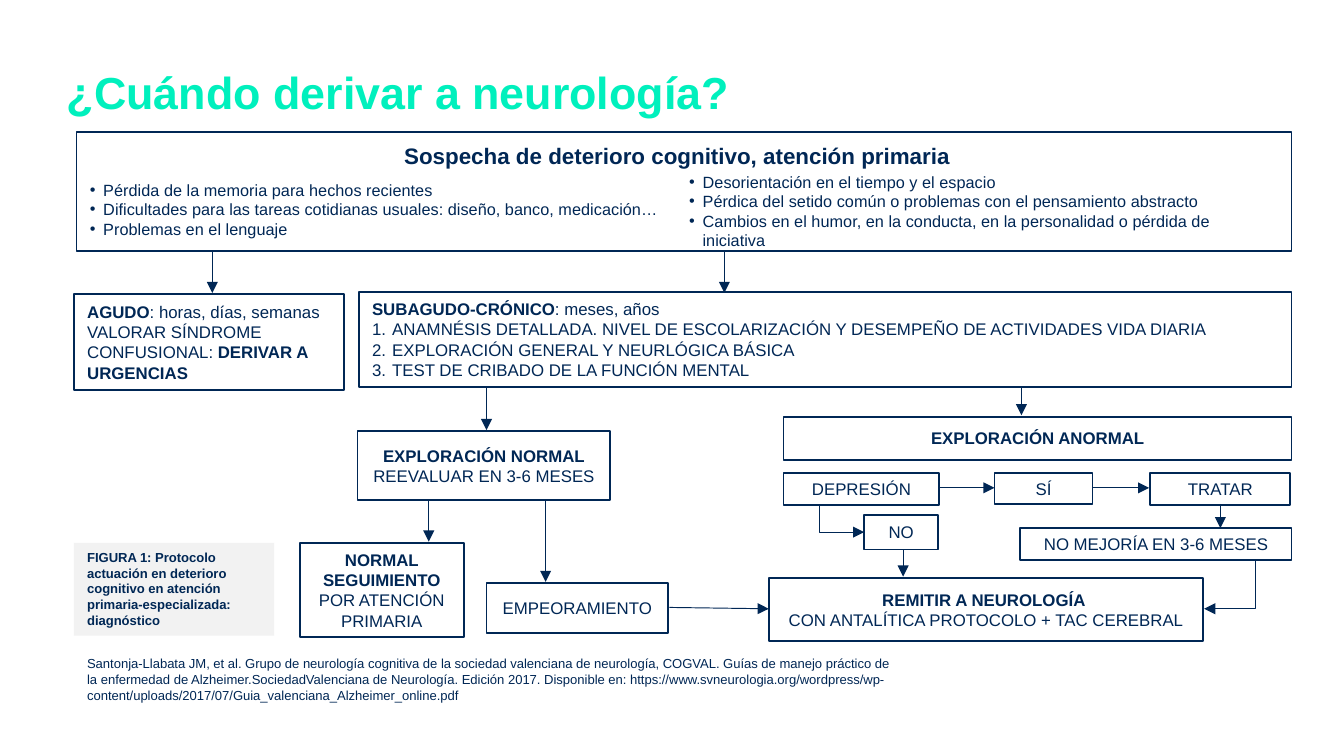
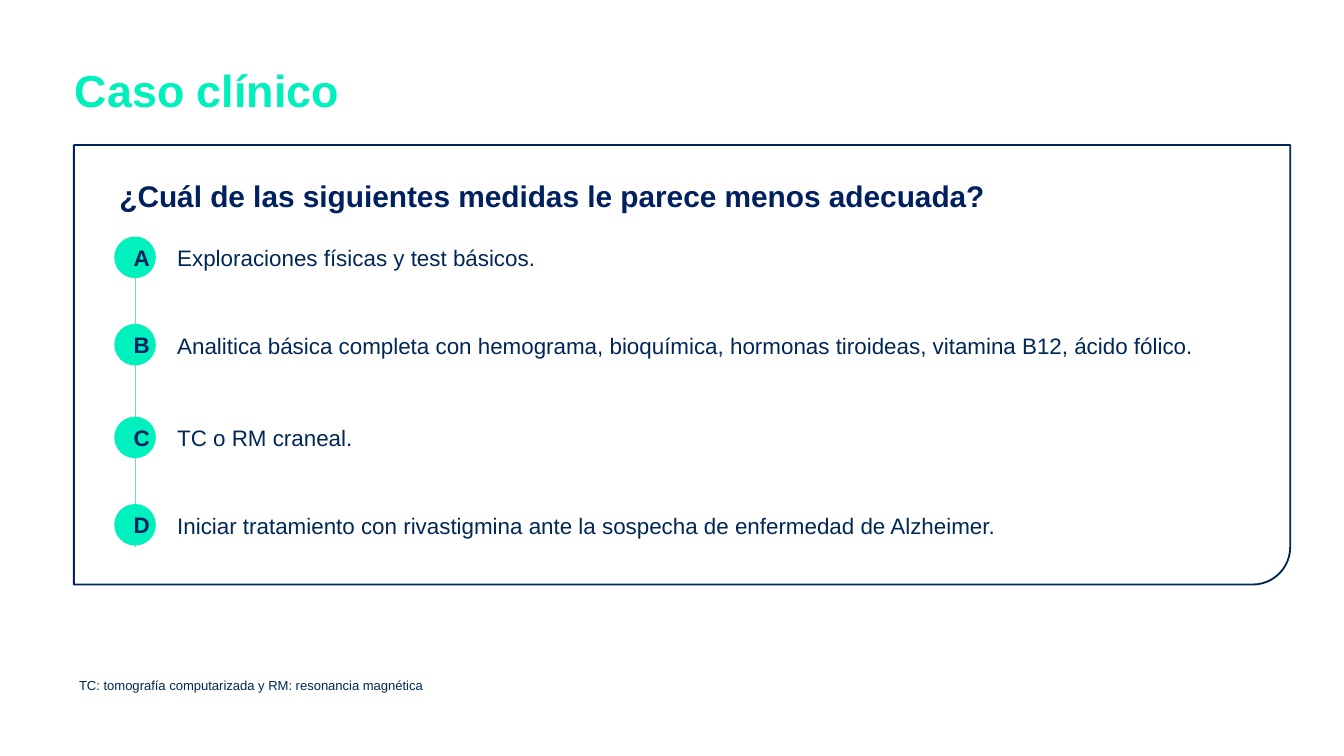
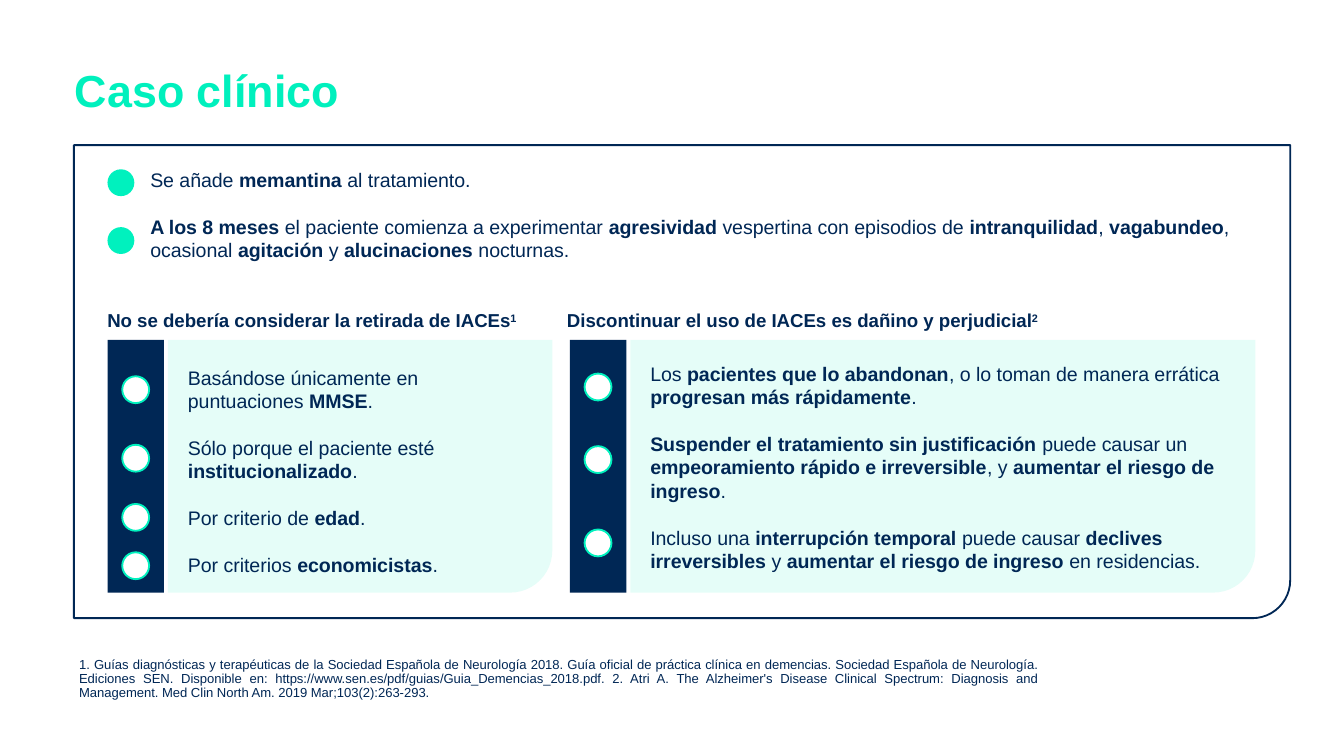
import pptx
import pptx.util
import pptx.dml.color
import pptx.enum.shapes
import pptx.enum.text
import pptx.oxml.ns
from lxml import etree

Inches = pptx.util.Inches
Pt = pptx.util.Pt
SHAPES = pptx.enum.shapes.MSO_SHAPE
CONNECTORS = pptx.enum.shapes.MSO_CONNECTOR
ALIGN = pptx.enum.text.PP_ALIGN
ANCHOR = pptx.enum.text.MSO_ANCHOR
qn = pptx.oxml.ns.qn

FONT = "Arial"
NAVY = "002755"
INDIGO = "002060"
GREEN = "00F1BE"
TITLE_GREEN = "00F0BD"
LINK_GREEN = "6BDEC1"
WHITE = "FFFFFF"
GREY = "F2F2F2"
DOT = 0.2
LETTER_DOT = 0.31


def color(value):
    return pptx.dml.color.RGBColor.from_string(value)


def add_element(parent, tag, **attributes):
    return etree.SubElement(parent, qn(tag), attributes)


def add_bullet(paragraph, bullet, indent):
    properties = paragraph._p.get_or_add_pPr()
    properties.set("marL", str(Inches(indent)))
    properties.set("indent", str(-Inches(indent)))
    add_element(properties, "a:buFont", typeface=FONT)
    if bullet == "number":
        add_element(properties, "a:buAutoNum", type="arabicPeriod")
    else:
        add_element(properties, "a:buChar", char=bullet)


def add_runs(paragraph, text):
    for position, part in enumerate(text.split("**")):
        for row, line in enumerate(part.split("\n")):
            if row:
                paragraph.add_line_break()
            if line:
                run = paragraph.add_run()
                run.text = line
                if position % 2:
                    run.font.bold = True


def write(shape, texts, size, ink=NAVY, bold=None, align=ALIGN.LEFT, anchor=ANCHOR.TOP,
          spacing=None, gap=0, bullet=None, indent=0.1, plain_first=False):
    frame = shape.text_frame
    frame.word_wrap = True
    frame.vertical_anchor = anchor
    for index, text in enumerate(texts):
        paragraph = frame.add_paragraph() if index else frame.paragraphs[0]
        paragraph.alignment = align
        if spacing:
            paragraph.line_spacing = spacing
        if gap and index:
            paragraph.space_before = Pt(gap)
        if bullet and not (plain_first and index == 0):
            add_bullet(paragraph, bullet, indent)
        paragraph.font.name = FONT
        paragraph.font.size = Pt(size)
        paragraph.font.color.rgb = color(ink)
        paragraph.font.bold = bold
        add_runs(paragraph, text)
    return frame


def add_text(slide, box, texts, size, **style):
    text_box = slide.shapes.add_textbox(*map(Inches, box))
    return write(text_box, texts, size, **style)


def add_shape(slide, kind, box, fill, outline=None, alpha=None):
    shape = slide.shapes.add_shape(kind, *map(Inches, box))
    shape.shadow.inherit = False
    shape.fill.solid()
    shape.fill.fore_color.rgb = color(fill)
    if alpha:
        fill_color = shape._element.spPr.find(qn("a:solidFill"))[0]
        add_element(fill_color, "a:alpha", val=str(alpha * 1000))
    if outline:
        shape.line.color.rgb = color(outline)
        shape.line.width = Pt(1)
    else:
        shape.line.fill.background()
    return shape


def add_corner_panel(slide, box, fill, corner, **style):
    panel = add_shape(slide, SHAPES.ROUND_1_RECTANGLE, box, fill, **style)
    panel.adjustments[0] = corner
    panel._element.spPr.find(qn("a:xfrm")).set("flipV", "1")


def add_line(slide, start, end, ink=NAVY, arrow=True, elbow=False):
    kind = CONNECTORS.ELBOW if elbow else CONNECTORS.STRAIGHT
    connector = slide.shapes.add_connector(kind, *map(Inches, start + end))
    connector.line.color.rgb = color(ink)
    connector.line.width = Pt(0.5)
    properties = connector._element.spPr
    if elbow:
        guides = properties.find(qn("a:prstGeom")).find(qn("a:avLst"))
        add_element(guides, "a:gd", name="adj1", fmla="val 0")
    if arrow:
        add_element(properties.find(qn("a:ln")), "a:tailEnd", type="triangle")
    add_element(properties, "a:effectLst")


def add_title(slide, text, box=(0.46, 0.46, 8.14, 0.65)):
    add_text(slide, box, [text], 24, ink=TITLE_GREEN, bold=True, spacing=0.9)


def add_footer(slide, box, text, **style):
    add_text(slide, box, [text], 7, **style)


def add_flow_box(slide, box, texts, align=ALIGN.CENTER, **style):
    shape = add_shape(slide, SHAPES.RECTANGLE, box, WHITE, outline=NAVY)
    write(shape, texts, 9, align=align, anchor=ANCHOR.MIDDLE, **style)


def add_suspicion_box(slide, box):
    left, top, width, height = box
    add_shape(slide, SHAPES.RECTANGLE, box, WHITE, outline=NAVY)
    add_text(slide, (left + 0.13, top + 0.03, width - 0.36, 0.3),
             ["Sospecha de deterioro cognitivo, atención primaria"], 12, bold=True, align=ALIGN.CENTER)
    column = width / 2 - 0.06
    add_text(slide, (left, top + 0.31, column, 0.55), [
        "Pérdida de la memoria para hechos recientes",
        "Dificultades para las tareas cotidianas usuales: diseño, banco, medicación…",
        "Problemas en el lenguaje",
    ], 8.7, bullet="•")
    add_text(slide, (left + column, top + 0.25, column, 0.65), [
        "Desorientación en el tiempo y el espacio",
        "Pérdica del setido común o problemas con el pensamiento abstracto",
        "Cambios en el humor, en la conducta, en la personalidad o pérdida de iniciativa",
    ], 8.7, bullet="•")


def add_flow_arrows(slide):
    straight = [
        ((1.58, 1.87), (1.58, 2.18)), ((5.39, 1.87), (5.39, 2.18)),
        ((3.62, 2.89), (3.62, 3.2)), ((7.6, 2.89), (7.6, 3.09)),
        ((6.99, 3.63), (7.4, 3.63)), ((8.13, 3.63), (8.55, 3.63)),
        ((6.72, 4.09), (6.72, 4.29)), ((9.08, 3.75), (9.08, 3.93)),
        ((4.98, 4.52), (5.72, 4.53)), ((3.19, 3.72), (3.19, 4.03)),
        ((4.06, 3.72), (4.06, 4.33)),
    ]
    for start, end in straight:
        add_line(slide, start, end)
    add_line(slide, (6.1, 3.76), (6.43, 3.96), elbow=True)
    add_line(slide, (9.34, 4.17), (8.96, 4.53), elbow=True)


def build_referral_slide(slide):
    add_title(slide, "¿Cuándo derivar a neurología?", (0.4, 0.48, 9.36, 0.65))
    add_suspicion_box(slide, (0.57, 0.98, 9.04, 0.89))
    add_flow_box(slide, (0.55, 2.19, 2.01, 0.71), [
        "**AGUDO**: horas, días, semanas",
        "VALORAR SÍNDROME CONFUSIONAL: **DERIVAR A URGENCIAS**",
    ], align=ALIGN.LEFT)
    add_flow_box(slide, (2.67, 2.17, 6.94, 0.71), [
        "**SUBAGUDO-CRÓNICO**: meses, años",
        "ANAMNÉSIS DETALLADA. NIVEL DE ESCOLARIZACIÓN Y DESEMPEÑO DE ACTIVIDADES VIDA DIARIA",
        "EXPLORACIÓN GENERAL Y NEURLÓGICA BÁSICA",
        "TEST DE CRIBADO DE LA FUNCIÓN MENTAL",
    ], align=ALIGN.LEFT, bullet="number", indent=0.15, plain_first=True)
    steps = [
        ((2.66, 3.21, 1.88, 0.51), ["**EXPLORACIÓN NORMAL**", "REEVALUAR EN 3-6 MESES"]),
        ((5.83, 3.1, 3.78, 0.32), ["**EXPLORACIÓN ANORMAL**"]),
        ((2.23, 4.04, 1.22, 0.7), ["**NORMAL SEGUIMIENTO**", "POR ATENCIÓN PRIMARIA"]),
        ((3.62, 4.34, 1.35, 0.37), ["EMPEORAMIENTO"]),
        ((5.83, 3.52, 1.16, 0.24), ["DEPRESIÓN"]),
        ((7.4, 3.52, 0.73, 0.23), ["SÍ"]),
        ((8.56, 3.52, 1.04, 0.24), ["TRATAR"]),
        ((6.43, 3.83, 0.55, 0.26), ["NO"]),
        ((7.59, 3.93, 2.02, 0.24), ["NO MEJORÍA EN 3-6 MESES"]),
        ((5.72, 4.3, 3.23, 0.47),
         ["**REMITIR A NEUROLOGÍA **\nCON ANTALÍTICA PROTOCOLO + TAC CEREBRAL"]),
    ]
    for box, texts in steps:
        add_flow_box(slide, box, texts)
    add_flow_arrows(slide)
    caption = add_shape(slide, SHAPES.RECTANGLE, (0.55, 4.04, 1.49, 0.69), GREY)
    write(caption, ["FIGURA 1: Protocolo actuación en deterioro cognitivo en atención "
                    "primaria-especializada: diagnóstico"], 7, bold=True)
    add_footer(slide, (0.55, 4.83, 6.26, 0.45),
               "Santonja-Llabata JM, et al. Grupo de neurología cognitiva de la sociedad valenciana de "
               "neurología, COGVAL. Guías de manejo práctico de la enfermedad de "
               "Alzheimer.SociedadValenciana de Neurología. Edición 2017. Disponible en: "
               "https://www.svneurologia.org/wordpress/wp-content/uploads/2017/07/"
               "Guia_valenciana_Alzheimer_online.pdf")


def add_options(slide, left, top, options):
    center = left + 0.16
    add_line(slide, (center, top + 0.05), (center, top + 2.31), ink=LINK_GREEN, arrow=False)
    for letter, offset, text in options:
        row = top + offset
        circle = add_shape(slide, SHAPES.FLOWCHART_CONNECTOR,
                           (left, row, LETTER_DOT, LETTER_DOT), GREEN)
        write(circle, [letter], 12, ink=INDIGO, bold=True, align=ALIGN.CENTER, anchor=ANCHOR.MIDDLE)
        add_text(slide, (left + 0.37, row + 0.01, 7.81, 0.3), [text], 12)


def build_question_slide(slide):
    left, top = 0.55, 1.08
    add_corner_panel(slide, (left, top, 9.05, 3.27), WHITE, 0.085, outline=NAVY)
    add_text(slide, (left + 0.24, top + 0.19, 7.04, 0.37),
             ["¿Cuál de las siguientes medidas le parece menos adecuada?"], 16, ink=INDIGO, bold=True)
    add_options(slide, left + 0.3, top + 0.68, [
        ("A", 0, "Exploraciones físicas y test básicos."),
        ("B", 0.65, "Analitica básica completa con hemograma, bioquímica, hormonas tiroideas, "
                    "vitamina B12, ácido fólico."),
        ("C", 1.34, "TC o RM craneal."),
        ("D", 1.99, "Iniciar tratamiento con rivastigmina ante la sospecha de enfermedad de Alzheimer."),
    ])
    add_footer(slide, (0.49, 4.99, 5.02, 0.22), "TC: tomografía computarizada y RM: resonancia magnética")
    add_title(slide, "Caso clínico")


def add_evidence_panel(slide, box, heading_box, heading, note, text_box, texts, dot_tops):
    left, top, width, height = box
    band = 0.42
    body_offset = band + 0.03
    frame = add_text(slide, heading_box, [heading], 10, bold=True)
    reference = frame.paragraphs[0].add_run()
    reference.text = note
    reference.font._element.set("baseline", "30000")
    add_corner_panel(slide, (left, top, band, height), NAVY, 0)
    add_corner_panel(slide, (left + body_offset, top, width - body_offset, height),
                     TITLE_GREEN, 0.1667, alpha=10)
    add_text(slide, text_box, texts, 10.5, gap=12.5)
    for dot_top in dot_tops:
        add_shape(slide, SHAPES.FLOWCHART_CONNECTOR,
                  (left + (band - DOT) / 2, top + dot_top, DOT, DOT), WHITE, outline=GREEN)


def build_evidence_slide(slide):
    left, top = 0.55, 1.08
    add_corner_panel(slide, (left, top, 9.05, 3.52), WHITE, 0.08, outline=NAVY)
    add_text(slide, (left + 0.47, top + 0.12, 8.3, 0.82), [
        "Se añade **memantina** al tratamiento.",
        "**A los 8 meses **el paciente comienza a experimentar **agresividad** vespertina con episodios de "
        "**intranquilidad**, **vagabundeo**, ocasional **agitación** y **alucinaciones** nocturnas.",
    ], 10.5, gap=12.5)
    for dot_top in (0.18, 0.61):
        add_shape(slide, SHAPES.FLOWCHART_CONNECTOR, (left + 0.25, top + dot_top, DOT, DOT), GREEN)
    add_evidence_panel(slide, (0.8, 2.53, 3.31, 1.88), (0.7, 2.25, 3.41, 0.27),
                       "No se debería considerar la retirada de IACEs", "1", (1.3, 2.67, 2.73, 1.69), [
        "Basándose únicamente en puntuaciones **MMSE**.",
        "Sólo porque el paciente esté **institucionalizado**.",
        "Por criterio de **edad**.",
        "Por criterios **economicistas**.",
    ], (0.27, 0.78, 1.22, 1.58))
    add_evidence_panel(slide, (4.24, 2.53, 5.1, 1.88), (4.12, 2.25, 4.52, 0.27),
                       "Discontinuar el uso de IACEs es dañino y perjudicial", "2", (4.74, 2.64, 4.63, 1.69), [
        "Los **pacientes que lo abandonan**, o lo toman de manera errática **progresan más rápidamente**.",
        "**Suspender el tratamiento sin justificación **puede causar un **empeoramiento rápido e "
        "irreversible**, y **aumentar el riesgo de ingreso**.",
        "Incluso una **interrupción temporal **puede causar **declives irreversibles** y "
        "**aumentar el riesgo de ingreso **en residencias.",
    ], (0.25, 0.79, 1.41))
    add_footer(slide, (0.49, 4.85, 7.33, 0.51),
               "1. Guías diagnósticas y terapéuticas de la Sociedad Española de Neurología 2018. Guía oficial "
               "de práctica clínica en demencias. Sociedad Española de Neurología. Ediciones SEN. Disponible "
               "en: https://www.sen.es/pdf/guias/Guia_Demencias_2018.pdf. 2. Atri A. The Alzheimer's Disease "
               "Clinical Spectrum: Diagnosis and Management. Med Clin North Am. 2019 Mar;103(2):263-293.",
               align=ALIGN.JUSTIFY, spacing=0.9)
    add_title(slide, "Caso clínico")


def main():
    presentation = pptx.Presentation()
    presentation.slide_width = Inches(10)
    presentation.slide_height = Inches(10) * 9 // 16
    for build in (build_referral_slide, build_question_slide, build_evidence_slide):
        build(presentation.slides.add_slide(presentation.slide_layouts[6]))
    presentation.save("out.pptx")


if __name__ == "__main__":
    main()
